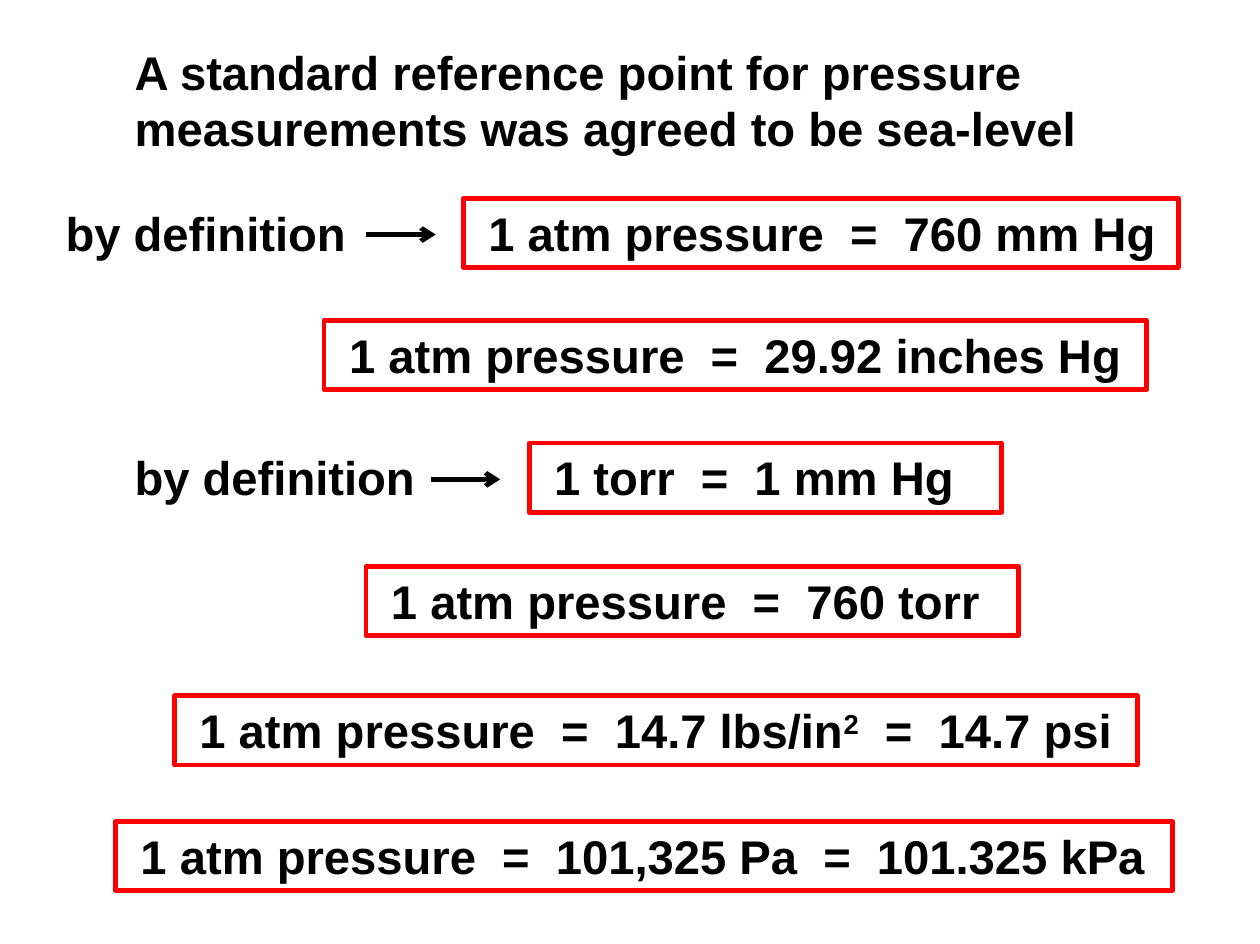
"""Builds a slide of pressure units set equal to one atmosphere."""
from lxml import etree
from pptx import Presentation
from pptx.dml.color import RGBColor
from pptx.enum.shapes import MSO_CONNECTOR, MSO_SHAPE
from pptx.enum.text import MSO_ANCHOR, PP_ALIGN
from pptx.oxml.ns import qn
from pptx.util import Inches, Pt

RECT = MSO_SHAPE.RECTANGLE
LINE = MSO_CONNECTOR.STRAIGHT
LEFT = PP_ALIGN.LEFT
TOP = MSO_ANCHOR.TOP
RED = RGBColor(255, 0, 0)
BLACK = RGBColor(0, 0, 0)

deck = Presentation()
deck.slide_width = Inches(11.12)
deck.slide_height = Inches(8.33)
COL = deck.slide_width / 100
ROW = deck.slide_height / 100
HIGH = 7.32
slide = deck.slides.add_slide(deck.slide_layouts[6])


def write(text, home, x, y, wide, high=HIGH, edge=None, inset=0.1):
    """Place bold text in a box; the part between two ^ marks is raised."""
    place = [round(n) for n in (x * COL, y * ROW, wide * COL, high * ROW)]
    if edge is None:
        box = home.add_textbox(*place)
    else:
        box = home.add_shape(RECT, *place)
        box.shadow.inherit = False
        box.fill.background()
        box.line.color.rgb = edge
        box.line.width = Pt(3)
    frame = box.text_frame
    frame.word_wrap = True
    frame.vertical_anchor = TOP
    frame.margin_left = Inches(inset)
    para = frame.paragraphs[0]
    para.alignment = LEFT
    for i, part in enumerate(text.split("^")):
        run = para.add_run()
        run.text = part
        font = run.font
        font.name, font.size, font.bold = "Arial", Pt(30), True
        font.color.rgb = BLACK
        if i % 2:
            run._r.get_or_add_rPr().set("baseline", "30000")


write("A standard reference point for pressure measurements was agreed to be sea-level",
      slide.shapes, 9.8, 3.96, 83.9, high=13.33)

FACTS = [
    ("1 atm pressure  =  760 mm Hg", 36.78, 21.01, 56.74, (4.32, 29.05)),
    ("1 atm pressure  =  29.92 inches Hg", 25.72, 33.97, 65.29, None),
    ("1 torr  =  1 mm Hg", 42, 46.94, 37.5, (9.8, 34.17)),
    ("1 atm pressure  =  760 torr", 29.05, 60.02, 51.8, None),
    ("1 atm pressure  =  14.7 lbs/in^2^  =  14.7 psi", 13.85, 73.71, 76.44, None),
    ("1 atm pressure  =  101,325 Pa  =  101.325 kPa", 9.17, 87.03, 83.9, None),
]
for fact, x, y, wide, cue in FACTS:
    home = slide.shapes.add_group_shape().shapes if cue else slide.shapes
    write(fact, home, x, y, wide, edge=RED, inset=0.22)
    if cue:
        label, start = cue
        write("by definition", home, label, y, 32.19)
        level = round((y + 3.84) * ROW)
        arrow = home.add_connector(LINE, round(start * COL), level,
                                   round((start + 5.53) * COL), level)
        arrow.line.color.rgb = BLACK
        arrow.line.width = Pt(3)
        etree.SubElement(arrow.line._get_or_add_ln(), qn("a:tailEnd"), type="arrow")
        etree.SubElement(arrow._element.spPr, qn("a:effectLst"))

deck.save("out.pptx")
